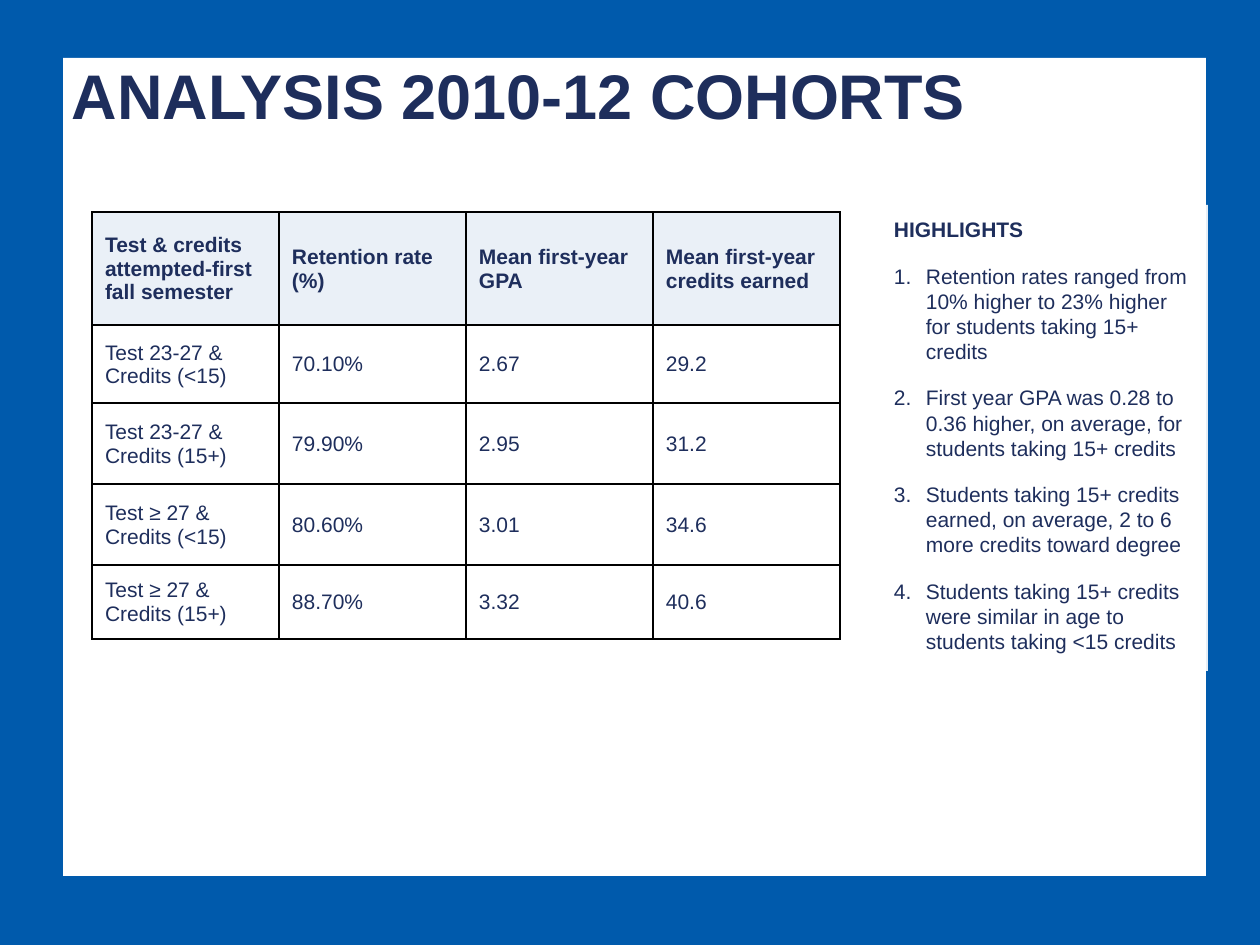
import pptx
import pptx.util
import pptx.dml.color
import pptx.enum.shapes
import pptx.enum.text
import pptx.oxml
import pptx.oxml.ns
from lxml import etree

PX = 914400 / 126
NAVY, WHITE, BLUE, PALE = "1E2E5C", "FFFFFF", "005AAC", "DCE6F2"
ANCHOR = pptx.enum.text.MSO_ANCHOR
RECT = pptx.enum.shapes.MSO_SHAPE.RECTANGLE
qn = pptx.oxml.ns.qn


def paint(fill, color, opacity=100):
    """Fill solidly, with opacity in percent."""
    fill.solid()
    fill.fore_color.rgb = pptx.dml.color.RGBColor.from_string(color)
    if opacity < 100:
        clr = fill._xPr.find(qn("a:solidFill") + "/" + qn("a:srgbClr"))
        etree.SubElement(clr, qn("a:alpha"), val=str(opacity * 1000))


def add_run(p, text, size, bold=False):
    p.alignment = pptx.enum.text.PP_ALIGN.LEFT
    r = p.add_run()
    r.text = text
    r.font.name = "Arial"
    r.font.size = pptx.util.Pt(size)
    r.font.bold = bold
    paint(r.font.fill, NAVY)


prs = pptx.Presentation()
prs.slide_width, prs.slide_height = round(1260 * PX), round(945 * PX)
s = prs.slides.add_slide(prs.slide_layouts[5])
paint(s.background.fill, BLUE)

# White panel, behind the title
panel = s.shapes.add_shape(RECT, *[round(v * PX) for v in (63, 58, 1143, 818)])
panel.shadow.inherit = False
paint(panel.fill, WHITE)
panel.line.fill.background()
s.shapes._spTree.insert(2, panel._element)

# Title
title = s.shapes.title
title.left, title.top, title.width, title.height = [round(v * PX) for v in (59, 50, 1032, 89)]
tf = title.text_frame
tf.word_wrap = True
tf.auto_size = pptx.enum.text.MSO_AUTO_SIZE.NONE
tf.vertical_anchor = ANCHOR.MIDDLE
add_run(tf.paragraphs[0], "ANALYSIS 2010-12 COHORTS", 36, True)

# Cohort table
rows = [
    ["Test & credits attempted-first fall semester", "Retention rate (%)",
     "Mean first-year GPA", "Mean first-year credits earned"],
    ["Test 23-27 &\nCredits (<15)", "70.10%", "2.67", "29.2"],
    ["Test 23-27 &\nCredits (15+)", "79.90%", "2.95", "31.2"],
    ["Test ≥ 27 &\nCredits (<15)", "80.60%", "3.01", "34.6"],
    ["Test ≥ 27 &\nCredits (15+)", "88.70%", "3.32", "40.6"],
]
row_heights = [113, 78, 81, 81, 74]
frame = s.shapes.add_table(len(rows), 4, *[round(v * PX) for v in (92, 212, 748, sum(row_heights))])
table = frame.table
for col in table.columns:
    col.width = round(187 * PX)
for i, (texts, height) in enumerate(zip(rows, row_heights)):
    table.rows[i].height = round(height * PX)
    for j, text in enumerate(texts):
        cell = table.cell(i, j)
        cell.vertical_anchor = ANCHOR.MIDDLE
        cell.margin_left = cell.margin_right = round(13 * PX)
        cell.margin_top, cell.margin_bottom = round(7 * PX), round(6 * PX)
        tf = cell.text_frame
        for n, line in enumerate(text.split("\n")):
            p = tf.add_paragraph() if n else tf.paragraphs[0]
            add_run(p, line, 12, i == 0)
        tcPr = cell._tc.get_or_add_tcPr()
        for side in ("lnL", "lnR", "lnT", "lnB"):
            ln = etree.SubElement(tcPr, qn("a:" + side), w=str(pptx.util.Pt(1)))
            solid = etree.SubElement(ln, qn("a:solidFill"))
            etree.SubElement(solid, qn("a:srgbClr"), val="000000")
        paint(cell.fill, WHITE if i else PALE, 59)

# Highlights
highlights = [
    "Retention rates ranged from 10% higher to 23% higher for students taking 15+ credits",
    "First year GPA was 0.28 to 0.36 higher, on average, for students taking 15+ credits",
    "Students taking 15+ credits earned, on average, 2 to 6 more credits toward degree",
    "Students taking 15+ credits were similar in age to students taking <15 credits",
]
box = s.shapes.add_shape(RECT, *[round(v * PX) for v in (882, 205, 326, 466)])
box.shadow.inherit = False
paint(box.fill, WHITE, 90)
box.line.fill.background()
tf = box.text_frame
tf.word_wrap = True
tf.vertical_anchor = ANCHOR.TOP
tf.margin_left = tf.margin_right = tf.margin_top = tf.margin_bottom = round(12 * PX)
for n, text in enumerate(["HIGHLIGHTS"] + highlights):
    p = tf.add_paragraph() if n else tf.paragraphs[0]
    add_run(p, text, 12, n == 0)
    p.line_spacing = 1.0
    p.space_after = pptx.util.Pt(12)
    if n:
        pPr = p._p.get_or_add_pPr()
        indent = round(32 * PX)
        pPr.set("marL", str(indent))
        pPr.set("indent", str(-indent))
        etree.SubElement(pPr, qn("a:buFont"), typeface="+mj-lt")
        etree.SubElement(pPr, qn("a:buAutoNum"), type="arabicPeriod")

prs.save("out.pptx")
